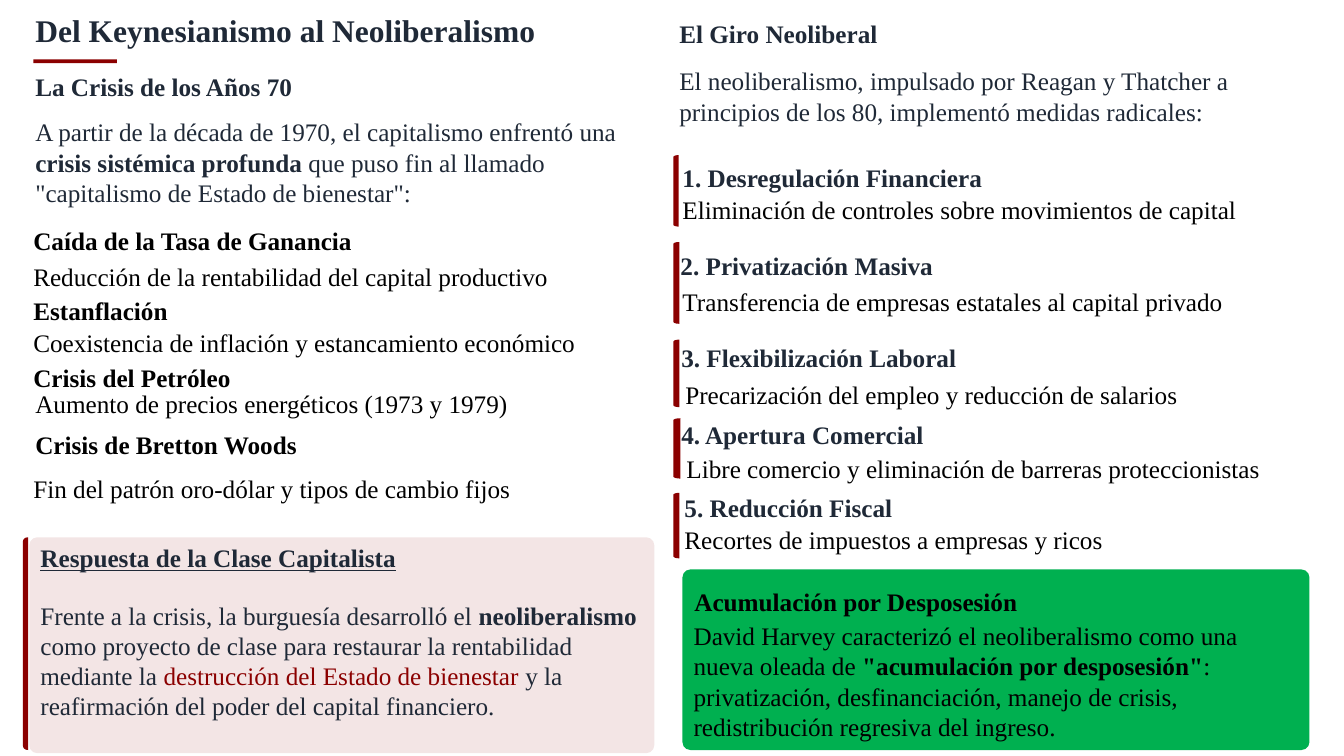
import math
from dataclasses import dataclass

from lxml import etree
from pptx import Presentation
from pptx.dml.color import RGBColor
from pptx.enum.shapes import MSO_SHAPE
from pptx.enum.text import MSO_ANCHOR
from pptx.oxml.ns import qn
from pptx.util import Cm, Pt

RECT = MSO_SHAPE.RECTANGLE
ROUND = MSO_SHAPE.ROUNDED_RECTANGLE
MIDDLE = MSO_ANCHOR.MIDDLE


@dataclass(frozen=True)
class Theme:
    font: str = "Times New Roman"
    slate: str = "1F2937"
    black: str = "000000"
    red: str = "8B0000"
    green: str = "00B050"
    title: float = 22.5
    body: float = 18


THEME = Theme()

# Left column: left, top, height, bold, text
CAUSES = [
    (0.84, 5.49, 0.89, True, "Caída de la Tasa de Ganancia"),
    (0.84, 6.48, 0.81, False, "Reducción de la rentabilidad del capital productivo"),
    (0.84, 7.44, 0.53, True, "Estanflación"),
    (0.84, 8.15, 0.81, False, "Coexistencia de inflación y estancamiento económico"),
    (0.84, 9.12, 0.53, True, "Crisis del Petróleo"),
    (0.89, 9.68, 0.84, False, "Aumento de precios energéticos (1973 y 1979)"),
    (0.89, 10.67, 0.84, True, "Crisis de Bretton Woods"),
    (0.84, 11.73, 0.99, False, "Fin del patrón oro-dólar y tipos de cambio fijos"),
]

# Right column: bar (top, width, height), head (left, top, text),
# note (left, height, text)
STEPS = [
    ((3.91, 0.13, 1.8), (17.2, 4.09, "1. Desregulación Financiera"),
     (17.2, 0.56, "Eliminación de controles sobre movimientos de capital")),
    ((6.1, 0.15, 2.06), (17.15, 6.32, "2. Privatización Masiva"),
     (17.2, 0.74, "Transferencia de empresas estatales al capital privado")),
    ((8.56, 0.15, 1.7), (17.17, 8.64, "3. Flexibilización Laboral"),
     (17.27, 0.79, "Precarización del empleo y reducción de salarios")),
    ((10.54, 0.18, 1.52), (17.17, 10.57, "4. Apertura Comercial"),
     (17.3, 0.66, "Libre comercio y eliminación de barreras proteccionistas")),
    ((12.42, 0.15, 1.65), (17.25, 12.4, "5. Reducción Fiscal"),
     (17.25, 0.58, "Recortes de impuestos a empresas y ricos")),
]


def run(text, color=THEME.slate, bold=False, under=False, size=THEME.body):
    return text, color, bold, under, size


def write(slide, box, runs, gap=1.0):
    """Add a one-paragraph text box with line spacing gap."""
    frame = slide.shapes.add_textbox(*map(Cm, box)).text_frame
    frame.word_wrap = True
    frame.vertical_anchor = MIDDLE
    frame.margin_left = frame.margin_right = 0
    frame.margin_top = frame.margin_bottom = 0
    para = frame.paragraphs[0]
    para.line_spacing = gap
    for text, color, bold, under, size in runs:
        part = para.add_run()
        part.text = text
        font = part.font
        font.name = THEME.font
        font.size = Pt(size)
        font.bold = bold
        font.underline = under
        font.color.rgb = RGBColor.from_string(color)


def paint(shape, color, alpha=None):
    shape.shadow.inherit = False
    shape.line.fill.background()
    shape.fill.solid()
    shape.fill.fore_color.rgb = RGBColor.from_string(color)
    if alpha is not None:
        tone = shape.fill._xPr.find(".//" + qn("a:srgbClr"))
        etree.SubElement(tone, qn("a:alpha")).set("val", str(alpha * 1000))


def panel(slide, box, color, alpha=None, radius=0.2):
    shape = slide.shapes.add_shape(ROUND if radius else RECT, *map(Cm, box))
    if radius:
        shape.adjustments[0] = radius / min(box[2:])
    paint(shape, color, alpha)


def bar(slide, left, top, width, height, bend=0.05):
    """Add an upright red bar whose left corners are rounded."""
    right, base = left + width, top + height
    arc = [(math.sin(a), math.cos(a))
           for a in (math.pi / 2 * i / 6 for i in range(7))]
    low = [(right - width * s, base - bend * (1 - c)) for s, c in arc]
    high = [(x, top + base - y) for x, y in reversed(low)]
    dots = [(Cm(x), Cm(y)) for x, y in low + high]
    path = slide.shapes.build_freeform(*dots[0])
    path.add_line_segments(dots[1:], close=True)
    paint(path.convert_to_shape(), THEME.red)


def crisis(slide):
    write(slide, (0.89, 0.38, 32.5, 0.89),
          [run("Del Keynesianismo al Neoliberalismo", bold=True, size=THEME.title)], 0.9)
    panel(slide, (0.84, 1.5, 2.11, 0.09), THEME.red, radius=0)
    write(slide, (0.89, 1.78, 16.05, 0.71), [run("La Crisis de los Años 70", bold=True)], 1.1)
    write(slide, (0.89, 2.84, 15.95, 2.49), [
        run("A partir de la década de 1970, el capitalismo enfrentó una "),
        run("crisis sistémica profunda", bold=True),
        run(' que puso fin al llamado "capitalismo de Estado de bienestar":'),
    ])
    for left, top, height, bold, text in CAUSES:
        write(slide, (left, top, 15.4, height), [run(text, THEME.black, bold)],
              1.3 if bold else 1.2)


def answer(slide):
    panel(slide, (0.74, 13.54, 15.75, 5.44), THEME.red, alpha=10)
    bar(slide, 0.58, 13.54, 0.13, 5.36, bend=0.1)
    write(slide, (1.02, 13.67, 15.16, 0.53),
          [run("Respuesta de la Clase Capitalista", bold=True, under=True)], 1.3)
    write(slide, (1.02, 14.53, 15.16, 4.22), [
        run("Frente a la crisis, la burguesía desarrolló el "),
        run("neoliberalismo", bold=True),
        run(" como proyecto de clase para restaurar la rentabilidad mediante la "),
        run("destrucción del Estado de bienestar ", THEME.red),
        run("y la reafirmación del poder del capital financiero."),
    ])


def turn(slide):
    write(slide, (17.12, 0.46, 16.05, 0.71), [run("El Giro Neoliberal", bold=True)], 1.1)
    write(slide, (17.12, 1.52, 15.95, 1.8), [
        run("El neoliberalismo, impulsado por Reagan y Thatcher a principios "
            "de los 80, implementó medidas radicales:")])
    for (top, width, height), (left, line, head), (inset, tall, note) in STEPS:
        bar(slide, 16.97, top, width, height)
        write(slide, (left, line, 15.34, 0.53), [run(head, bold=True)], 1.3)
        write(slide, (inset, line + 0.84, 15.32, tall), [run(note, THEME.black)], 1.2)


def seizure(slide):
    panel(slide, (17.2, 14.35, 15.8, 4.55), THEME.green)
    write(slide, (17.5, 14.6, 15.27, 0.89),
          [run("Acumulación por Desposesión", THEME.black, True)], 1.3)
    write(slide, (17.48, 15.6, 15.27, 3.12), [
        run("David Harvey caracterizó el neoliberalismo como una nueva oleada de ", THEME.black),
        run('"acumulación por desposesión"', THEME.black, True),
        run(": privatización, desfinanciación, manejo de crisis, "
            "redistribución regresiva del ingreso.", THEME.black),
    ])


def main():
    deck = Presentation()
    deck.slide_width, deck.slide_height = Cm(33.87), Cm(19.05)
    slide = deck.slides.add_slide(deck.slide_layouts[6])
    crisis(slide)
    answer(slide)
    turn(slide)
    seizure(slide)
    deck.save("out.pptx")


if __name__ == "__main__":
    main()
